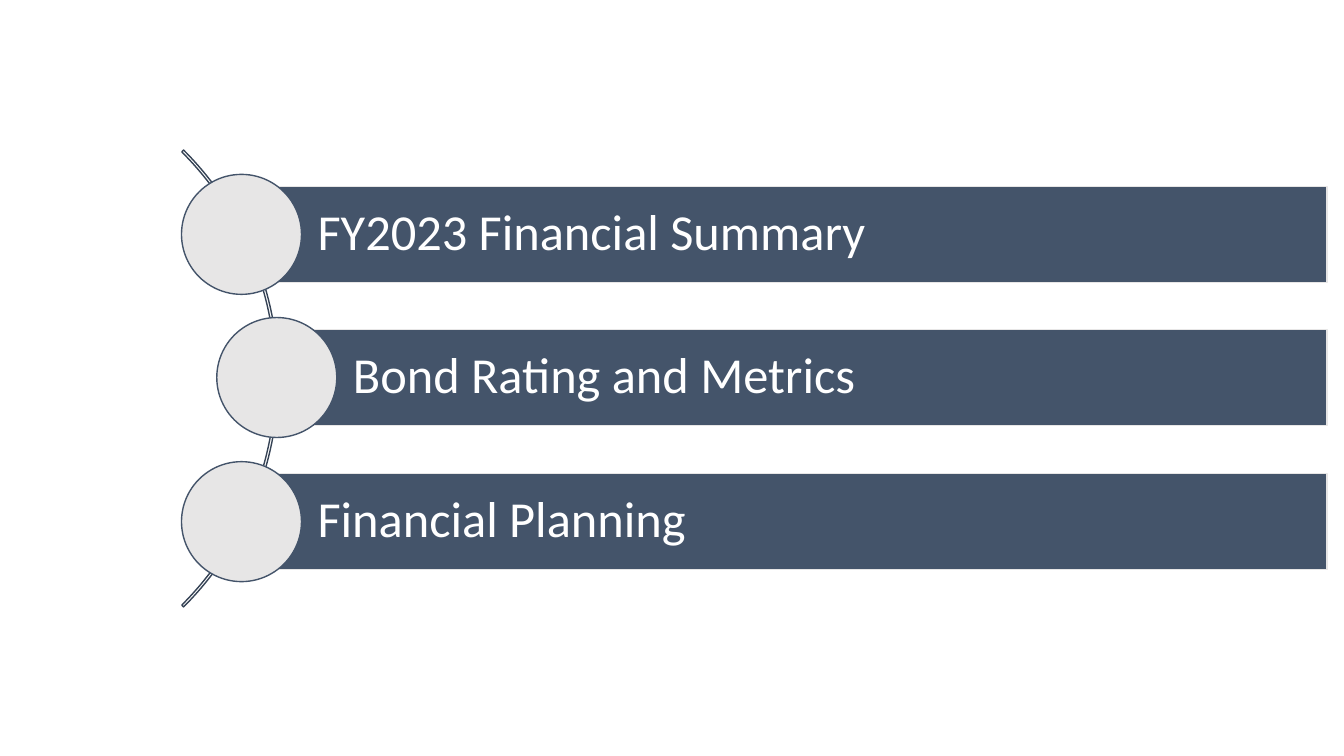
from collections import namedtuple

from pptx import Presentation
from pptx.dml.color import RGBColor
from pptx.enum.shapes import MSO_SHAPE
from pptx.enum.text import MSO_ANCHOR, PP_ALIGN
from pptx.util import Emu, Pt

Box = namedtuple("Box", "left top width height")

SCALE = 9144
SLATE, SILVER, EDGE, WHITE = "44546A", "E7E6E6", "364355", "FFFFFF"
AGENDA = Box(180, 55, 1136, 641)
TOPICS = [
    ("FY2023 Financial Summary", 0),
    ("Bond Rating and Metrics", 35),
    ("Financial Planning", 0),
]
BAR_HEIGHT = 95
FIRST_BAR = 130
TWO_ROWS = 285
BALL = 119
ARC_OFFSET = 545
FRAME_FORMAT = {
    "word_wrap": True,
    "vertical_anchor": MSO_ANCHOR.MIDDLE,
    "margin_left": Emu(76 * SCALE),
    "margin_right": Emu(10 * SCALE),
    "margin_top": Emu(10 * SCALE),
    "margin_bottom": Emu(10 * SCALE),
}
PARA_FORMAT = {"alignment": PP_ALIGN.LEFT, "line_spacing": 0.9}
FONT_FORMAT = {"name": "Calibri", "size": Pt(36)}


def px(length):
    return Emu(length * SCALE)


def paint(color_format, value):
    color_format.rgb = RGBColor.from_string(value)


def set_format(target, values):
    for name, value in values.items():
        setattr(target, name, value)


def add_figure(page, kind, box, line, fill=None):
    figure = page.shapes.add_shape(kind, *map(px, box))
    figure.shadow.inherit = False
    if fill:
        figure.fill.solid()
        paint(figure.fill.fore_color, fill)
    else:
        figure.fill.background()
    paint(figure.line.color, line)
    figure.line.width = Pt(1)
    return figure


def add_arc(page, box):
    arc_box = Box(box.left - ARC_OFFSET, box.top, box.height, box.height)
    arc = add_figure(page, MSO_SHAPE.BLOCK_ARC, arc_box, EDGE)
    for index, value in enumerate((189, 27, 0.004)):
        arc.adjustments[index] = value


def add_topic(page, box, topic):
    bar = add_figure(page, MSO_SHAPE.RECTANGLE, box, SILVER, SLATE)
    frame = bar.text_frame
    set_format(frame, FRAME_FORMAT)
    para = frame.paragraphs[0]
    set_format(para, PARA_FORMAT)
    span = para.add_run()
    span.text = topic
    set_format(span.font, FONT_FORMAT)
    paint(span.font.color, WHITE)
    ball_box = Box(box.left - BALL // 2, box.top - (BALL - box.height) // 2, BALL, BALL)
    add_figure(page, MSO_SHAPE.OVAL, ball_box, SLATE, SILVER)


def add_agenda(page, box):
    add_arc(page, box)
    for row, (topic, shift) in enumerate(TOPICS):
        inset = BALL // 2 + shift
        top = box.top + FIRST_BAR + row * TWO_ROWS // 2
        add_topic(page, Box(box.left + inset, top, box.width - inset, BAR_HEIGHT), topic)


def main():
    deck = Presentation()
    deck.slide_width, deck.slide_height = px(1333), px(750)
    page = deck.slides.add_slide(deck.slide_layouts[6])
    add_agenda(page, AGENDA)
    deck.save("out.pptx")


if __name__ == "__main__":
    main()
